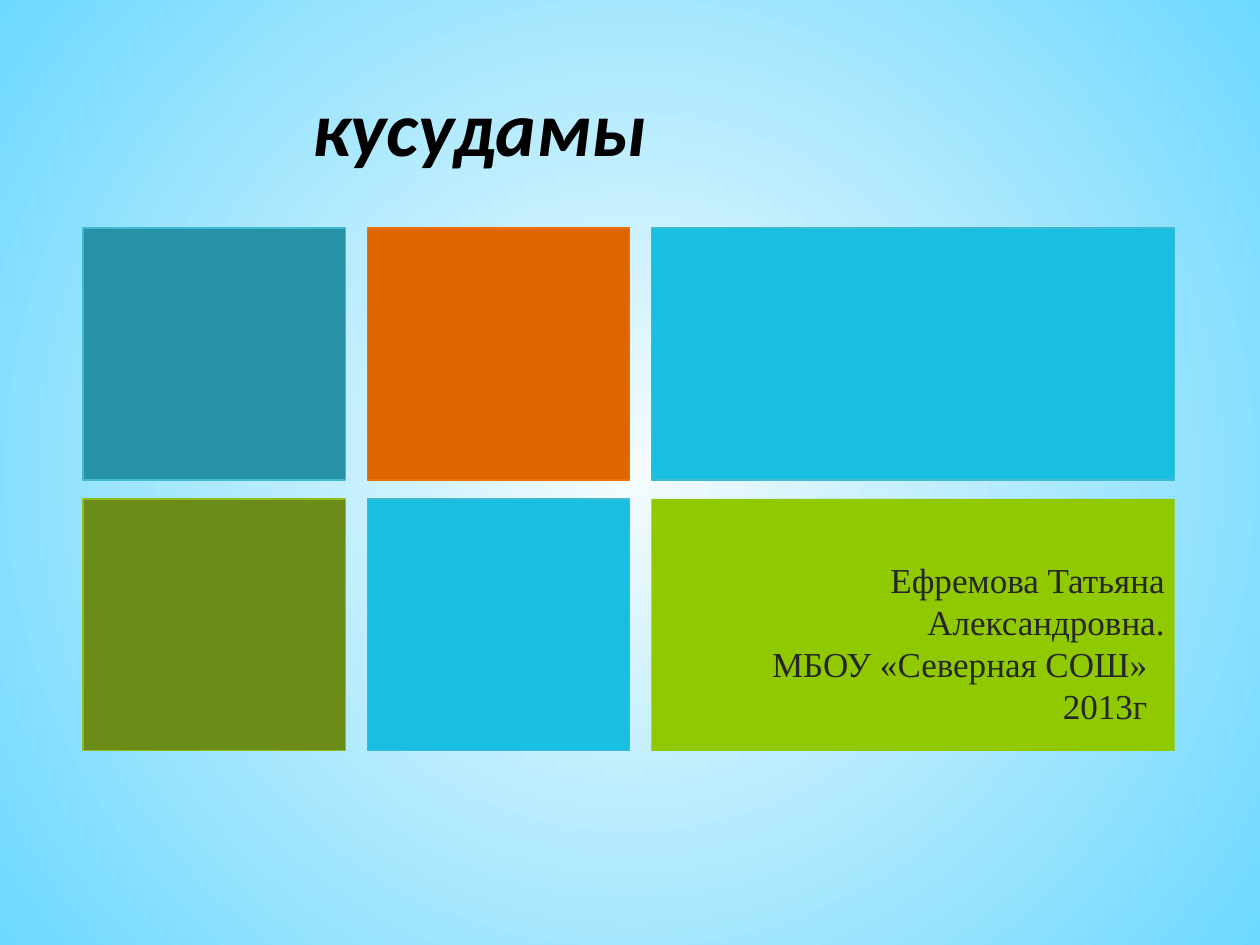
import dataclasses

import lxml.etree
import pptx
import pptx.dml.color
import pptx.enum.shapes
import pptx.enum.text
import pptx.oxml
import pptx.oxml.ns
import pptx.util

Pt = pptx.util.Pt
ALIGN = pptx.enum.text.PP_ALIGN


@dataclasses.dataclass(frozen=True)
class Theme:
    glow: str = "F5FCFD"
    sky: str = "6DD8FF"
    cyan: str = "19BFE0"
    cyan_edge: str = "40BAD2"
    teal: str = "2791A6"
    orange: str = "DF6500"
    orange_edge: str = "EE7008"
    lime: str = "90C900"
    olive: str = "6C8C1A"
    olive_edge: str = "90BB23"
    title_color: str = "000000"
    author_color: str = "262626"
    title_size: int = 44
    author_size: int = 20
    title_font: str = "Calibri"
    author_font: str = "Times New Roman"


theme = Theme()


def rgb(value):
    return pptx.dml.color.RGBColor.from_string(value)


def add_text(slide, lines, left, top, width, height, *, font, size, color,
             align, bold=False, italic=False):
    """Add a wrapped text box with one paragraph per line."""
    box = slide.shapes.add_textbox(Pt(left), Pt(top), Pt(width), Pt(height))
    frame = box.text_frame
    frame.word_wrap = True
    frame.auto_size = pptx.enum.text.MSO_AUTO_SIZE.SHAPE_TO_FIT_TEXT
    frame.text = "\n".join(lines)
    for paragraph in frame.paragraphs:
        paragraph.alignment = align
        for run in paragraph.runs:
            run.font.name = font
            run.font.size = Pt(size)
            run.font.bold = bold
            run.font.italic = italic
            run.font.color.rgb = rgb(color)
    return frame


presentation = pptx.Presentation()
presentation.slide_width = Pt(720)
presentation.slide_height = Pt(540)
slide = presentation.slides.add_slide(presentation.slide_layouts[6])

# Background: a circular glow from the centre of the slide
background = slide.background.fill
background.gradient()
for stop, color in zip(background.gradient_stops, (theme.glow, theme.sky)):
    stop.color.rgb = rgb(color)
gradient = slide.background._cSld.find(".//" + pptx.oxml.ns.qn("a:gradFill"))
linear = gradient.find(pptx.oxml.ns.qn("a:lin"))
circle = lxml.etree.Element(pptx.oxml.ns.qn("a:path"), {"path": "circle"})
lxml.etree.SubElement(circle, pptx.oxml.ns.qn("a:fillToRect"),
                      {side: "50000" for side in "ltrb"})
gradient.replace(linear, circle)

# Tiles: two rows, the last column is double width
grid_left, grid_top = 47.5, 130.3
column_widths = (150, 150, 299)
tile_height = 144
column_gap, row_gap = 12.4, 10.8
tile_rows = (
    ((theme.teal, theme.cyan_edge), (theme.orange, theme.orange_edge),
     (theme.cyan, theme.cyan_edge)),
    ((theme.olive, theme.olive_edge), (theme.cyan, theme.cyan_edge),
     (theme.lime, None)),
)
for row, tiles in enumerate(tile_rows):
    left = grid_left
    top = grid_top + row * (tile_height + row_gap)
    for width, (fill, edge) in zip(column_widths, tiles):
        tile = slide.shapes.add_shape(
            pptx.enum.shapes.MSO_SHAPE.RECTANGLE,
            Pt(left), Pt(top), Pt(width), Pt(tile_height))
        tile.shadow.inherit = False
        tile.fill.solid()
        tile.fill.fore_color.rgb = rgb(fill)
        if edge:
            tile.line.color.rgb = rgb(edge)
            tile.line.width = Pt(0.75)
        else:
            tile.line.fill.background()
        left += width + column_gap

add_text(slide, ["кусудамы"], 40.3, 41.8, 467.3, 60.5,
         font=theme.title_font, size=theme.title_size, color=theme.title_color,
         align=ALIGN.CENTER, bold=True, italic=True)

author = add_text(
    slide,
    ["Ефремова Татьяна Александровна.", "МБОУ «Северная СОШ»", "2013г"],
    375.8, 315.4, 296.9, 104.4,
    font=theme.author_font, size=theme.author_size, color=theme.author_color,
    align=ALIGN.RIGHT)
# The school's name stands a little in from the right edge
author.paragraphs[1]._p.get_or_add_pPr().set("marR", str(Pt(10)))

presentation.save("out.pptx")
